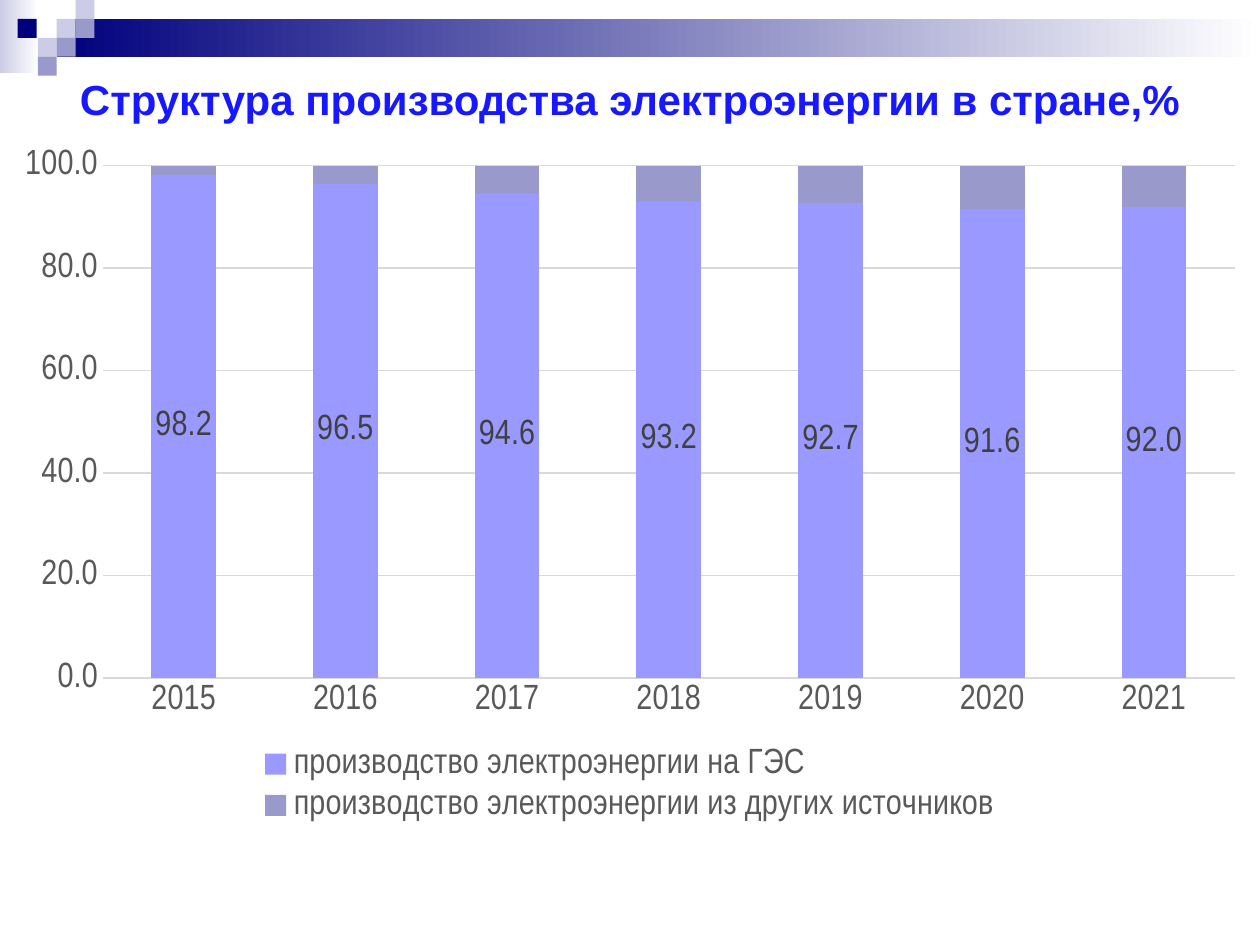
from pptx import Presentation
from pptx.chart.data import CategoryChartData
from pptx.dml.color import RGBColor
from pptx.enum.chart import XL_CHART_TYPE, XL_LABEL_POSITION, XL_LEGEND_POSITION, XL_TICK_MARK
from pptx.enum.shapes import MSO_SHAPE
from pptx.enum.text import MSO_ANCHOR, PP_ALIGN
from pptx.util import Pt

RECTANGLE = MSO_SHAPE.RECTANGLE
STACKED = XL_CHART_TYPE.COLUMN_STACKED
LABEL_CENTER = XL_LABEL_POSITION.CENTER
LEGEND_BOTTOM = XL_LEGEND_POSITION.BOTTOM
NO_TICK = XL_TICK_MARK.NONE
MIDDLE = MSO_ANCHOR.MIDDLE
CENTER = PP_ALIGN.CENTER

COLORS = {
    "navy": "00007D", "pale": "CCCCE6", "lavender": "9999CC", "white": "FFFFFF",
    "title": "1818FF", "hydro": "9999FF", "grid": "D9D9D9",
    "axis": "595959", "label": "404040", "black": "000000",
}
SQUARE = 10.8
SQUARES = [
    (32.4, 10.8, "pale"), (43.2, 0, "pale"), (43.2, 10.8, "lavender"),
    (21.6, 21.6, "pale"), (10.1, 10.8, "navy"), (32.4, 21.6, "lavender"),
    (21.6, 32.4, "lavender"),
]
YEARS = ["2015", "2016", "2017", "2018", "2019", "2020", "2021"]
HYDRO_SHARES = [98.2, 96.5, 94.6, 93.2, 92.7, 91.6, 92.0]


def color(name):
    """Return the named colour."""
    return RGBColor.from_string(COLORS[name])


def style_font(font, color_name, size=20, name="Arial Narrow", bold=False):
    """Set typeface, size, weight and colour of a font."""
    font.name, font.size, font.bold = name, Pt(size), bold
    font.color.rgb = color(color_name)


def add_rectangle(slide, left, top, width, height):
    """Add a rectangle without outline or shadow."""
    shape = slide.shapes.add_shape(RECTANGLE, Pt(left), Pt(top), Pt(width), Pt(height))
    shape.shadow.inherit = False
    shape.line.fill.background()
    return shape


def add_square(slide, left, top, color_name):
    """Add one square of the corner ornament."""
    shape = add_rectangle(slide, left, top, SQUARE, SQUARE)
    shape.fill.solid()
    shape.fill.fore_color.rgb = color(color_name)


def add_fading_band(slide, left, top, width, height, color_name):
    """Add a band that fades to white from left to right."""
    fill = add_rectangle(slide, left, top, width, height).fill
    fill.gradient()
    fill.gradient_angle = 0
    for stop, name, position in zip(fill.gradient_stops, (color_name, "white"), (0, 1)):
        stop.color.rgb = color(name)
        stop.position = position


def add_title(slide, text):
    """Add the centred slide title."""
    frame = slide.shapes.add_textbox(Pt(36), Pt(36), Pt(648), Pt(41)).text_frame
    frame.word_wrap = True
    frame.vertical_anchor = MIDDLE
    paragraph = frame.paragraphs[0]
    paragraph.alignment = CENTER
    run = paragraph.add_run()
    run.text = text
    style_font(run.font, "title", 24, "Arial", True)


def style_axes(chart):
    """Format the year axis and the percentage axis."""
    for axis in (chart.category_axis, chart.value_axis):
        axis.major_tick_mark = axis.minor_tick_mark = NO_TICK
        style_font(axis.tick_labels.font, "axis")
    value_axis = chart.value_axis
    value_axis.minimum_scale, value_axis.maximum_scale = 0, 100
    value_axis.major_unit = 20
    value_axis.tick_labels.number_format = "0.0"
    value_axis.tick_labels.number_format_is_linked = False
    value_axis.format.line.fill.background()
    for line in (chart.category_axis.format.line, value_axis.major_gridlines.format.line):
        line.color.rgb = color("grid")
        line.width = Pt(0.75)


def style_series(plot):
    """Colour the stacked series and label the hydropower shares."""
    plot.gap_width, plot.overlap = 150, 100
    plot.vary_by_categories = False
    for series, name in zip(plot.series, ("hydro", "lavender")):
        series.format.fill.solid()
        series.format.fill.fore_color.rgb = color(name)
    labels = plot.series[0].data_labels
    labels.show_value = True
    labels.number_format = "0.0"
    labels.number_format_is_linked = False
    labels.position = LABEL_CENTER
    style_font(labels.font, "label")


def add_generation_chart(slide):
    """Add the stacked chart of electricity generation shares."""
    data = CategoryChartData(number_format="0.0")
    data.categories = YEARS
    data.add_series("производство электроэнергии на ГЭС", HYDRO_SHARES)
    data.add_series("производство электроэнергии из других источников",
                    [round(100 - share, 1) for share in HYDRO_SHARES])
    chart = slide.shapes.add_chart(STACKED, Pt(0), Pt(77), Pt(720), Pt(397), data).chart
    chart.has_title = False
    style_font(chart.font, "black")
    style_axes(chart)
    style_series(chart.plots[0])
    chart.has_legend = True
    chart.legend.position = LEGEND_BOTTOM
    chart.legend.include_in_layout = False
    style_font(chart.legend.font, "axis")


def main():
    """Build and save the slide."""
    presentation = Presentation()
    presentation.slide_width, presentation.slide_height = Pt(720), Pt(540)
    slide = presentation.slides.add_slide(presentation.slide_layouts[6])
    add_fading_band(slide, 0, 0, 22.3, 41.8, "pale")
    add_fading_band(slide, 32.4, 10.8, 687.6, 21.6, "navy")
    for left, top, color_name in SQUARES:
        add_square(slide, left, top, color_name)
    add_title(slide, "Структура производства электроэнергии в стране,%")
    add_generation_chart(slide)
    presentation.save("out.pptx")


if __name__ == "__main__":
    main()
